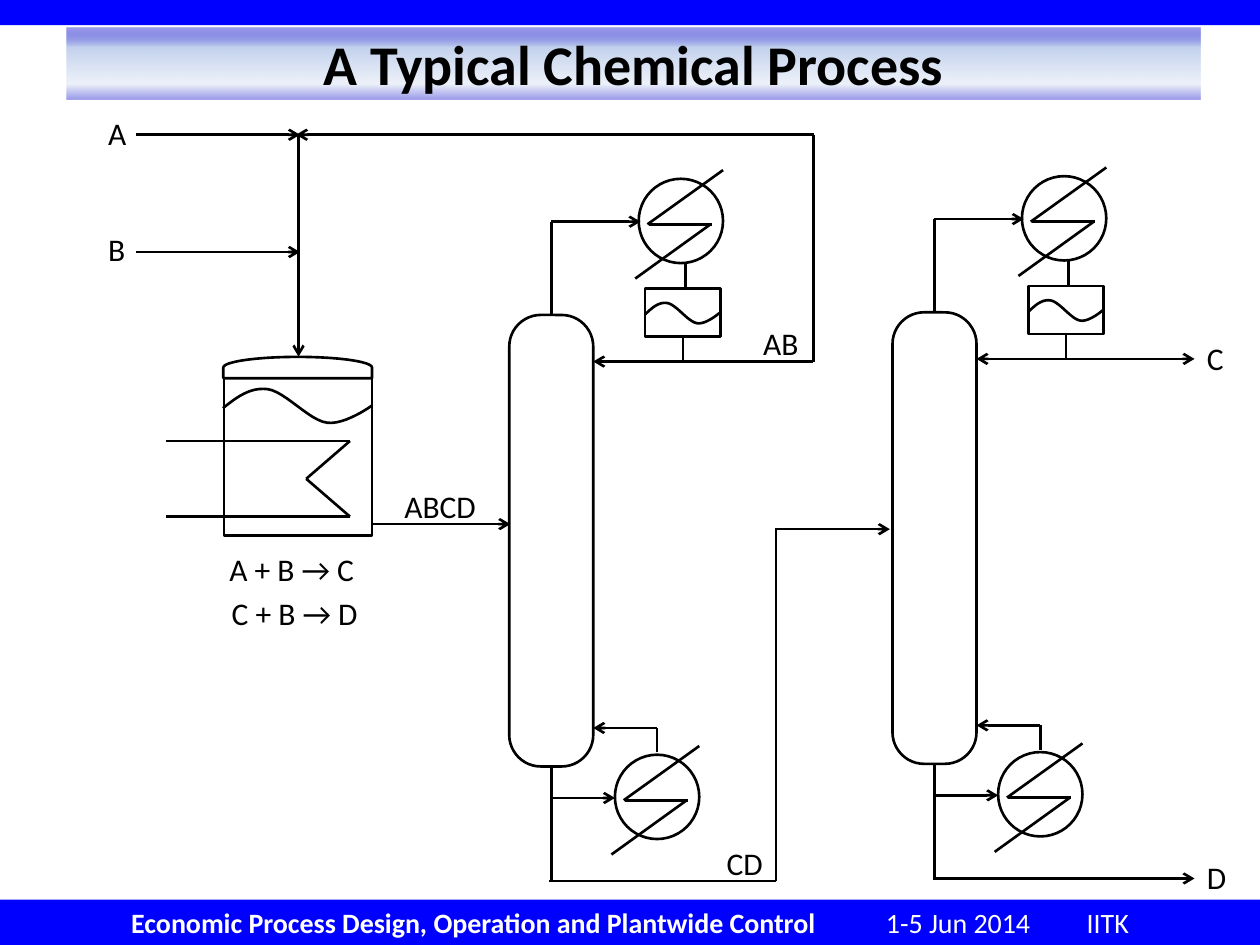
import pptx
import pptx.util
import pptx.dml.color
import pptx.enum.shapes
import pptx.enum.text
import pptx.oxml.ns
from lxml import etree

Pt = pptx.util.Pt
MSO = pptx.enum.shapes.MSO_SHAPE
PP_ALIGN = pptx.enum.text.PP_ALIGN
MIDDLE = pptx.enum.text.MSO_ANCHOR.MIDDLE
qn = pptx.oxml.ns.qn

BLACK = pptx.dml.color.RGBColor(0, 0, 0)
WHITE = pptx.dml.color.RGBColor(255, 255, 255)
BLUE = pptx.dml.color.RGBColor(0, 0, 255)
FONT = "Calibri"
LINE_WIDTH = Pt(1.5)

prs = pptx.Presentation()
prs.slide_width, prs.slide_height = Pt(720), Pt(540)
s = prs.slides.add_slide(prs.slide_layouts[6])


def shape(kind, x, y, w, h, fill=None):
    """Filled shape without outline, or outlined shape without fill."""
    sp = s.shapes.add_shape(kind, Pt(x), Pt(y), Pt(w), Pt(h))
    sp.shadow.inherit = False
    if fill is None:
        sp.fill.background()
        sp.line.color.rgb = BLACK
        sp.line.width = LINE_WIDTH
    else:
        sp.fill.solid()
        sp.fill.fore_color.rgb = fill
        sp.line.fill.background()
    return sp


def line(x1, y1, x2, y2, ends=()):
    """Straight line; ends may name headEnd (start) and tailEnd (finish)."""
    cx = s.shapes.add_connector(pptx.enum.shapes.MSO_CONNECTOR.STRAIGHT,
                                Pt(x1), Pt(y1), Pt(x2), Pt(y2))
    cx.line.color.rgb = BLACK
    cx.line.width = LINE_WIDTH
    ln = cx.line._get_or_add_ln()
    for end in ends:
        etree.SubElement(ln, qn("a:" + end)).set("type", "arrow")
    etree.SubElement(cx._element.spPr, qn("a:effectLst"))
    return cx


ARROW = ("tailEnd",)
BOTH = ("headEnd", "tailEnd")

# Top bar
shape(MSO.RECTANGLE, 0, 0, 720, 14.4, BLUE)

# Footer bar with tab stops between its three parts
sp = shape(MSO.RECTANGLE, 0, 514, 720, 26.5, BLUE)
tf = sp.text_frame
tf.margin_left, tf.margin_right = Pt(75), 0
tf.vertical_anchor = MIDDLE
p = tf.paragraphs[0]
p.alignment = PP_ALIGN.LEFT
tabs = etree.SubElement(p._p.get_or_add_pPr(), qn("a:tabLst"))
for pos in (431.3, 546):
    tab = etree.SubElement(tabs, qn("a:tab"))
    tab.set("pos", str(int(Pt(pos))))
    tab.set("algn", "l")
for text, bold in (("Economic Process Design, Operation and Plantwide Control", True),
                   ("\t1-5 Jun 2014\tIITK", False)):
    r = p.add_run()
    r.text = text
    r.font.name, r.font.size, r.font.bold = FONT, Pt(16), bold
    r.font.color.rgb = WHITE

# Title on a vertical gradient
sp = shape(MSO.RECTANGLE, 38.2, 15.8, 648, 41, WHITE)
grad = etree.Element(qn("a:gradFill"), rotWithShape="1")
stops = etree.SubElement(grad, qn("a:gsLst"))
for pos, color, alpha in ((1, "0000CC", 39), (27, "C2D1ED", 100),
                          (78, "D2DDF1", 40), (100, "0000CC", 40)):
    gs = etree.SubElement(stops, qn("a:gs"), pos=str(pos * 1000))
    clr = etree.SubElement(gs, qn("a:srgbClr"), val=color)
    etree.SubElement(clr, qn("a:alpha"), val=str(alpha * 1000))
etree.SubElement(grad, qn("a:lin"), ang="5400000", scaled="0")
spPr = sp._element.spPr
spPr.replace(spPr.find(qn("a:solidFill")), grad)
tf = sp.text_frame
tf.text = "A Typical Chemical Process"
tf.vertical_anchor = MIDDLE
p = tf.paragraphs[0]
p.alignment = PP_ALIGN.CENTER
r = p.runs[0]
r.font.name, r.font.size, r.font.bold = FONT, Pt(32), True
r.font.color.rgb = BLACK

# Reactor with its lid and heating coil
shape(MSO.RECTANGLE, 128, 216, 84.5, 90)
shape(MSO.FLOWCHART_DELAY, 164, 167.5, 12.2, 85).rotation = 270
for x1, y1, x2, y2 in ((95, 252, 200, 252), (95, 295.2, 200, 295.2),
                       (175, 273.6, 200, 295.2), (175, 273.6, 200, 252)):
    line(x1, y1, x2, y2)

# Feeds A and B, reactor inlet and outlet
for x1, y1, x2, y2 in ((77.8, 77, 171.4, 77), (77.8, 144, 171.4, 144),
                       (170.6, 77.8, 170.6, 203.8), (212.5, 299.5, 291.6, 299.5)):
    line(x1, y1, x2, y2, ARROW)

# The two distillation columns are the same unit, shifted
waves = [(127.4, 221.8, 85, 20.2)]
for dx, dy in ((0, 0), (219, -1.5)):
    mid = 315 + dx
    column = shape(MSO.ROUNDED_RECTANGLE, 291 + dx, 180 + dy, 48, 258)
    column.adjustments[0] = 0.376
    drum = shape(MSO.RECTANGLE, 368.6 + dx, 165 + dy, 43.2, 27.4)
    waves.append((368.6 + dx, 172.8 + dy, 42.5, 12.2))

    # Condenser and reboiler
    for cx, cy in ((365, 102.2), (351.4, 431.3)):
        x, y = cx + dx, cy + dy
        shape(MSO.OVAL, x, y, 48.2, 48.2)
        line(x + 48.2, y - 5, x + 5, y + 26)
        line(x + 41, y + 26, x - 2, y + 57)
        line(x + 5.8, y + 26, x + 41.8, y + 26)

    # Overhead pipes
    line(mid, 180 + dy, mid, 126.7 + dy).begin_connect(column, 0)
    line(mid, 126.7 + dy, 366 + dx, 126.7 + dy, ARROW)
    line(391.7 + dx, 164.3 + dy, 391.7 + dx, 150 + dy)
    line(390.2 + dx, 206.6 + dy, 390.2 + dx, 192.4 + dy).end_connect(drum, 2)

    # Bottom pipes
    line(mid, 503.5 + dy, mid, 438 + dy).end_connect(column, 2)
    line(mid, 456 + dy, 351.4 + dx, 456 + dy, ARROW)
    line(375.5 + dx, 430 + dy, 375.5 + dx, 416 + dy)
    line(375.5 + dx, 416 + dy, 339 + dx, 416 + dy, ARROW)

# Recycle of AB, transfer of CD and the products C and D
line(339, 206.6, 464.4, 206.6, ("headEnd",))
line(465, 206.6, 465, 77)
line(465, 77, 169.2, 77, ARROW)
line(314, 503.5, 443.5, 503.5)
line(443.5, 503.5, 443.5, 302)
line(443.5, 302.4, 508.5, 302.4, ARROW)
line(558, 205.1, 682.6, 205.1, BOTH)
line(533, 502, 682.6, 502, ARROW)

# Liquid levels: sampled cubic curves on a unit box
CURVES = (((0, 0.57), (0.09, 0.27), (0.18, -0.03), (0.3, 0.03)),
          ((0.3, 0.03), (0.42, 0.1), (0.58, 0.92), (0.7, 0.98)),
          ((0.7, 0.98), (0.82, 1.05), (1, 0.5), (1, 0.5)))
STEPS = 12
for x, y, w, h in waves:
    pts = []
    for a, b, c, d in CURVES:
        for t in (i / STEPS for i in range(1, STEPS + 1)):
            u, v = ((1 - t) ** 3 * a[k] + 3 * t * (1 - t) ** 2 * b[k]
                    + 3 * t * t * (1 - t) * c[k] + t ** 3 * d[k] for k in (0, 1))
            pts.append((Pt(x + u * w), Pt(y + v * h)))
    fb = s.shapes.build_freeform(Pt(x), Pt(y + CURVES[0][0][1] * h))
    fb.add_line_segments(pts, close=False)
    sp = fb.convert_to_shape()
    sp.shadow.inherit = False
    sp.fill.background()
    sp.line.color.rgb = BLACK
    sp.line.width = LINE_WIDTH

# Stream labels and reactions
for text, x, y, w in (("A", 54.7, 61.5, 25), ("B", 54.7, 128, 24.5),
                      ("A + B → C", 124, 311, 86.4), ("C + B → D", 125.3, 336, 87.8),
                      ("ABCD", 224, 275, 56), ("AB", 429, 181.5, 34.6),
                      ("CD", 408.2, 479, 35.3), ("C", 682.6, 190, 24.5),
                      ("D", 682.6, 487, 26)):
    tf = s.shapes.add_textbox(Pt(x), Pt(y), Pt(w), Pt(29)).text_frame
    tf.word_wrap = False
    tf.text = text
    r = tf.paragraphs[0].runs[0]
    r.font.name, r.font.size = FONT, Pt(18)
    r.font.color.rgb = BLACK

prs.save("out.pptx")
